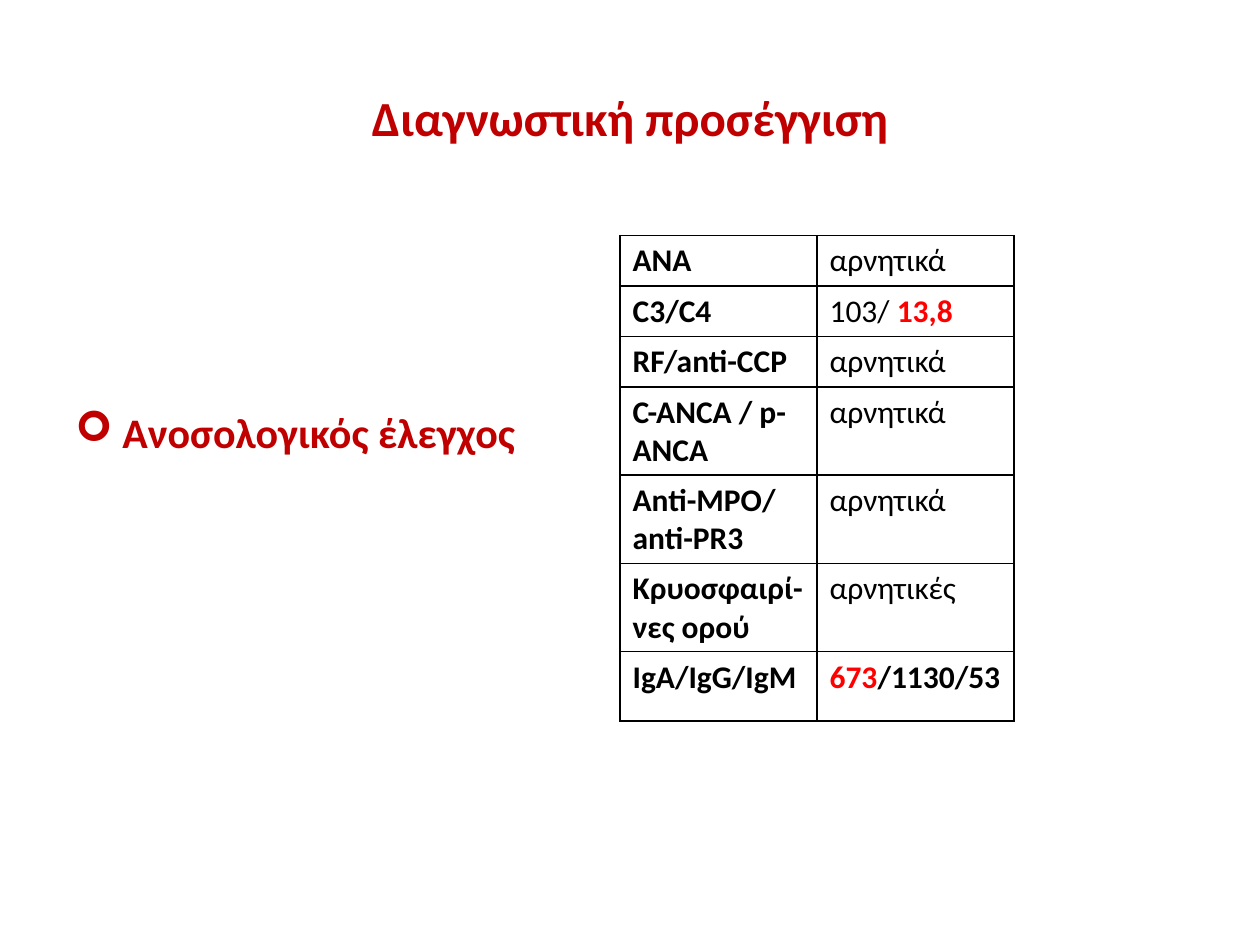
"""Build the slide on the diagnostic approach with its immunology results."""
from dataclasses import dataclass

from lxml.etree import SubElement
from pptx import Presentation
from pptx.dml.color import RGBColor as Rgb
from pptx.enum.text import MSO_ANCHOR as Anchor, PP_ALIGN as Align
from pptx.oxml.ns import qn
from pptx.util import Cm, Pt

COLORS = {"heading": "C00000", "text": "000000", "abnormal": "FF0000", "border": "000000"}
FONT = "Calibri"


@dataclass(frozen=True)
class Span:
    text: str
    bold: bool = False
    color: str = "text"


@dataclass(frozen=True)
class Result:
    test: str
    values: tuple[Span, ...]
    height: float


@dataclass(frozen=True)
class Heading:
    text: str
    left: float
    top: float
    width: float
    height: float
    size: int
    align: Align


NEGATIVE = (Span("αρνητικά"),)
ONE_LINE, TWO_LINES, LAST_LINE = 0.91, 1.6, 1.4
RESULTS = (
    Result("ANA", NEGATIVE, ONE_LINE),
    Result("C3/C4", (Span("103/ "), Span("13,8", True, "abnormal")), ONE_LINE),
    Result("RF/anti-CCP", NEGATIVE, ONE_LINE),
    Result("C-ANCA / p-ANCA", NEGATIVE, TWO_LINES),
    Result("Anti-MPO/ anti-PR3", NEGATIVE, TWO_LINES),
    Result("Κρυοσφαιρί-νες ορού", (Span("αρνητικές"),), TWO_LINES),
    Result("IgA/IgG/IgM", (Span("673", True, "abnormal"), Span("/1130/53", True)), LAST_LINE),
)
TITLE = Heading("Διαγνωστική προσέγγιση", 1.27, 0.76, 22.86, 3.18, 28, Align.CENTER)
TOPIC = Heading("Ανοσολογικός έλεγχος", 1.27, 7.95, 11, 1.52, 24, Align.LEFT)


def style_run(run, size: int, bold: bool, color: str) -> None:
    """Set the font of one run."""
    run.font.name = FONT
    run.font.size = Pt(size)
    run.font.bold = bold
    run.font.color.rgb = Rgb.from_string(COLORS[color])


def add_heading(page, heading: Heading):
    """Add a bold heading and return its paragraph."""
    box = page.shapes.add_textbox(
        Cm(heading.left), Cm(heading.top), Cm(heading.width), Cm(heading.height)
    )
    frame = box.text_frame
    frame.word_wrap = True
    frame.vertical_anchor = Anchor.MIDDLE
    frame.text = heading.text
    para = frame.paragraphs[0]
    para.alignment = heading.align
    style_run(para.runs[0], heading.size, True, "heading")
    return para


def add_bullet(para, symbol: str, indent: float) -> None:
    """Give a paragraph a hanging bullet."""
    properties = para._p.get_or_add_pPr()
    properties.set("marL", str(Cm(indent)))
    properties.set("indent", str(-Cm(indent)))
    SubElement(properties, qn("a:buFont"), typeface="Wingdings")
    SubElement(properties, qn("a:buChar"), char=symbol)


def add_borders(cell) -> None:
    """Draw a thin line on all four sides of a cell."""
    properties = cell._tc.get_or_add_tcPr()
    for side in ("lnL", "lnR", "lnT", "lnB"):
        line = SubElement(properties, qn(f"a:{side}"), w=str(Pt(1)))
        fill = SubElement(line, qn("a:solidFill"))
        SubElement(fill, qn("a:srgbClr"), val=COLORS["border"])


def fill_cell(cell, spans: tuple[Span, ...]) -> None:
    """Write the spans into a bordered cell without fill."""
    para = cell.text_frame.paragraphs[0]
    for span in spans:
        run = para.add_run()
        run.text = span.text
        style_run(run, 18, span.bold, span.color)
    add_borders(cell)
    cell.fill.background()


def add_results(page, results: tuple[Result, ...]) -> None:
    """Add the table of tests and their values."""
    column_width = Cm(3.97)
    height = Cm(sum(result.height for result in results))
    table = page.shapes.add_table(
        len(results), 2, Cm(12.5), Cm(4.75), 2 * column_width, height
    ).table
    table.first_row = table.horz_banding = False
    for column in table.columns:
        column.width = column_width
    for index, result in enumerate(results):
        table.rows[index].height = Cm(result.height)
        fill_cell(table.cell(index, 0), (Span(result.test, True),))
        fill_cell(table.cell(index, 1), result.values)


def main() -> None:
    """Create and save the deck."""
    deck = Presentation()
    deck.slide_width, deck.slide_height = Cm(25.4), Cm(19.05)
    page = deck.slides.add_slide(deck.slide_layouts[6])
    add_heading(page, TITLE)
    add_bullet(add_heading(page, TOPIC), "➢", 0.95)
    add_results(page, RESULTS)
    deck.save("out.pptx")


if __name__ == "__main__":
    main()
